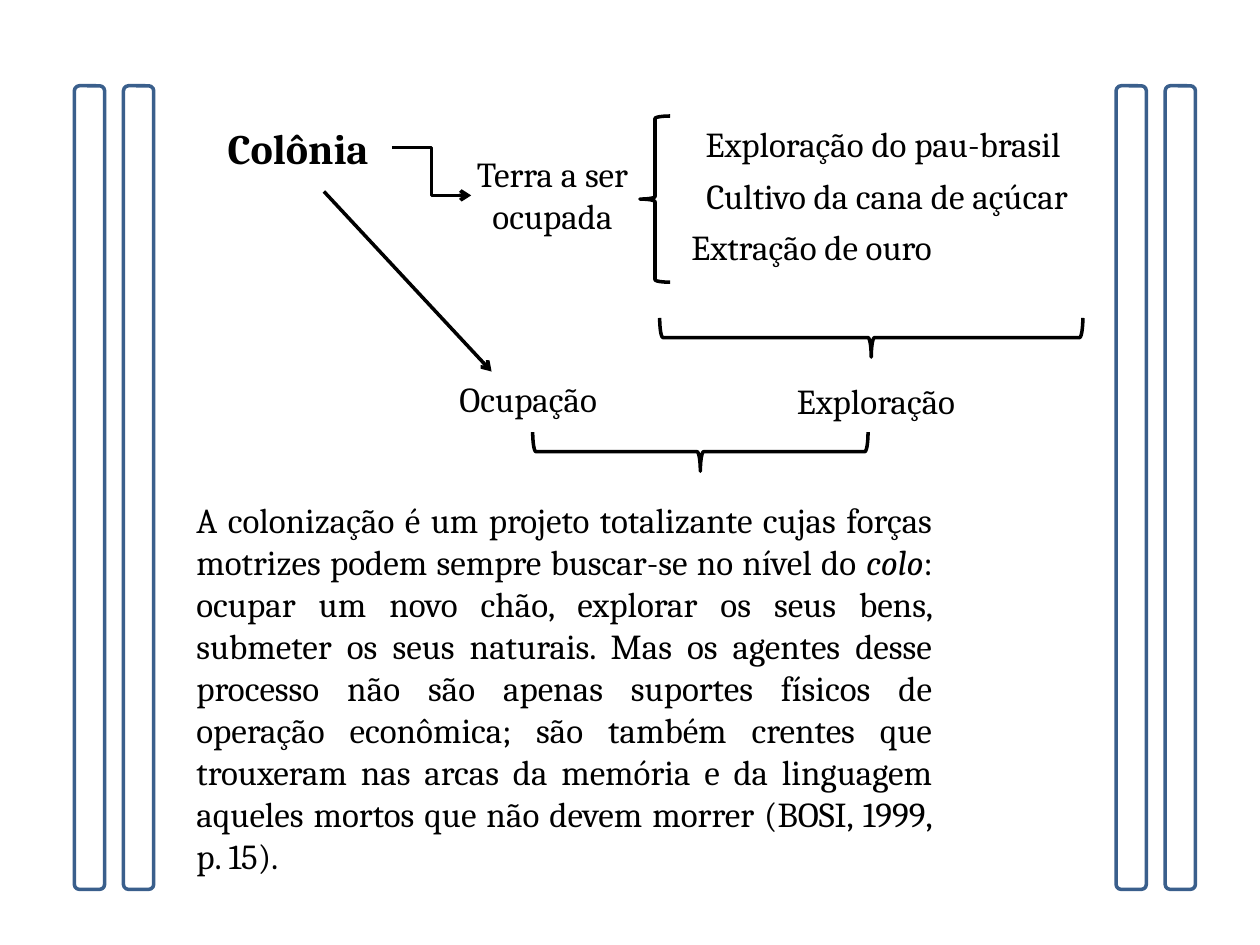
from dataclasses import dataclass

from lxml import etree
from pptx import Presentation
from pptx import util as u
from pptx.dml.color import RGBColor
from pptx.enum import shapes, text
from pptx.oxml import ns


@dataclass(frozen=True)
class Theme:
    ink: RGBColor = RGBColor(0, 0, 0)
    paper: RGBColor = RGBColor(255, 255, 255)
    edge: RGBColor = RGBColor(0x3A, 0x5F, 0x8C)
    font: str = "Cambria"
    heading: u.Pt = u.Pt(24)
    body: u.Pt = u.Pt(20)
    stroke: u.Pt = u.Pt(2)


@dataclass(frozen=True)
class Box:
    left: float
    top: float
    width: float
    height: float

    def inner(self, left, top, width, height):
        return Box(self.left + left, self.top + top, width, height)

    def lengths(self):
        return [u.Cm(n) for n in (self.left, self.top, self.width, self.height)]


THEME = Theme()
CENTER = text.PP_ALIGN.CENTER
JUSTIFY = text.PP_ALIGN.JUSTIFY


def apply(target, formats):
    for name, value in formats.items():
        setattr(target, name, value)


def write(shape, spans, align=CENTER, size=THEME.body, bold=False):
    apply(shape.text_frame, {
        "word_wrap": True,
        "auto_size": text.MSO_AUTO_SIZE.SHAPE_TO_FIT_TEXT,
        "vertical_anchor": text.MSO_ANCHOR.TOP,
    })
    para = shape.text_frame.paragraphs[0]
    para.alignment = align
    for words, italic in spans:
        span = para.add_run()
        span.text = words
        apply(span.font, {"name": THEME.font, "size": size,
                          "bold": bold, "italic": italic})
        span.font.color.rgb = THEME.ink


def add_label(page, box, words, align=CENTER):
    write(page.shapes.add_textbox(*box.lengths()), [(words, False)], align)


def draw_line(shape, color):
    shape.line.color.rgb = color
    shape.line.width = THEME.stroke


def add_outline(page, kind, box, color):
    shape = page.shapes.add_shape(kind, *box.lengths())
    shape.shadow.inherit = False
    draw_line(shape, color)
    return shape


def add_brace(page, box, points_down=False):
    if points_down:
        shift = (box.width - box.height) / 2
        box = box.inner(shift, -shift, box.height, box.width)
    brace = add_outline(page, shapes.MSO_SHAPE.LEFT_BRACE, box, THEME.ink)
    brace.fill.background()
    brace.rotation = 270 if points_down else 0


def add_arrow(page, kind, box):
    left, top, width, height = box.lengths()
    arrow = page.shapes.add_connector(kind, left, top, left + width, top + height)
    draw_line(arrow, THEME.ink)
    etree.SubElement(arrow.line._get_or_add_ln(), ns.qn("a:tailEnd"), type="arrow")
    etree.SubElement(arrow._element.spPr, ns.qn("a:effectLst"))


def add_pillars(page, box):
    bar = 0.61
    for offset in (0, box.width - bar):
        pillar = add_outline(page, shapes.MSO_SHAPE.ROUNDED_RECTANGLE,
                             box.inner(offset, 0, bar, box.height), THEME.edge)
        pillar.fill.solid()
        pillar.fill.fore_color.rgb = THEME.paper


def add_diagram(page, box):
    title = page.shapes.title
    apply(title, dict(zip(("left", "top", "width", "height"),
                          box.inner(0, 0, 4.6, 1.27).lengths())))
    write(title, [("Colônia", False)], size=THEME.heading, bold=True)

    labels = [
        ("Terra a ser ocupada", (5.26, 0.61, 4.34, 1.96), CENTER),
        ("Exploração do pau-brasil", (9.7, 0, 8.79, 1.12), CENTER),
        ("Cultivo da cana de açúcar", (9.78, 1.06, 8.79, 1.12), CENTER),
        ("Extração de ouro", (9.98, 2.08, 6.1, 1.12), JUSTIFY),
        ("Ocupação", (4.77, 5.15, 4.34, 1.12), CENTER),
        ("Exploração", (11.78, 5.18, 4.34, 1.12), CENTER),
    ]
    for words, place, align in labels:
        add_label(page, box.inner(*place), words, align)

    add_arrow(page, shapes.MSO_CONNECTOR.ELBOW, box.inner(4.19, 0.63, 1.6, 0.97))
    add_arrow(page, shapes.MSO_CONNECTOR.STRAIGHT, box.inner(2.82, 1.52, 3.38, 3.63))

    add_brace(page, box.inner(9.19, 0, 0.61, 3.35))
    add_brace(page, box.inner(9.59, 4.07, 8.53, 0.79), points_down=True)
    add_brace(page, box.inner(7.03, 6.37, 6.76, 0.79), points_down=True)


def add_quote(page, box):
    write(page.shapes.add_textbox(*box.lengths()), [
        ("A colonização é um projeto totalizante cujas forças motrizes podem "
         "sempre buscar-se no nível do ", False),
        ("colo", True),
        (": ocupar um novo chão, explorar os seus bens, submeter os seus "
         "naturais. Mas os agentes desse processo não são apenas suportes "
         "físicos de operação econômica; são também crentes que trouxeram nas "
         "arcas da memória e da linguagem aqueles mortos que não devem morrer "
         "(BOSI, 1999, p. 15).", False),
    ], JUSTIFY)


def main():
    deck = Presentation()
    apply(deck, {"slide_width": u.Cm(25.4), "slide_height": u.Cm(19.05)})
    page = deck.slides.add_slide(deck.slide_layouts.get_by_name("Title Only"))
    for left in (1.5, 22.5):
        add_pillars(page, Box(left, 1.73, 1.6, 16.2))
    add_diagram(page, Box(3.71, 2.34, 18.57, 7.16))
    add_quote(page, Box(3.71, 9.93, 15.34, 7.95))
    deck.save("out.pptx")


if __name__ == "__main__":
    main()
